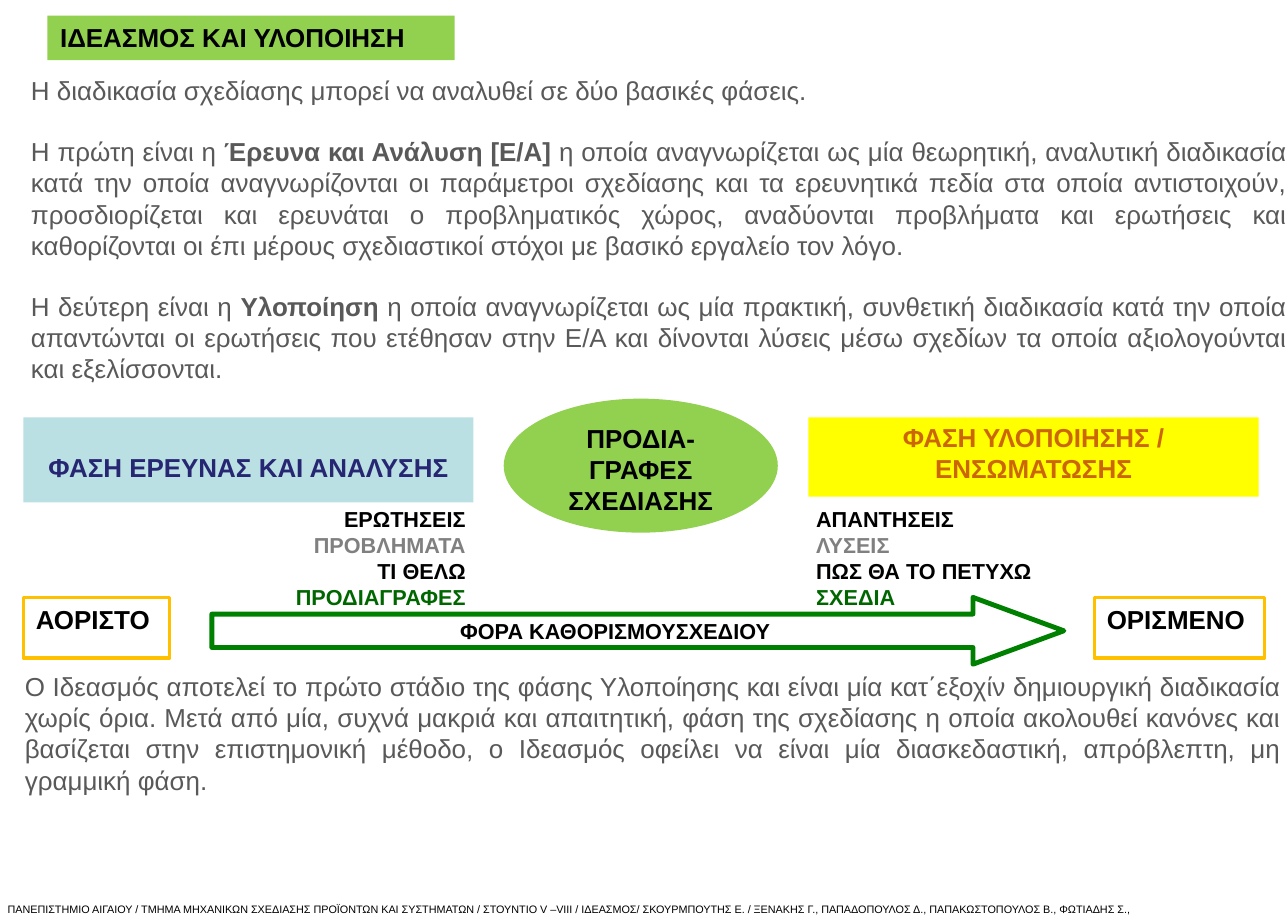
from pptx import Presentation, util as u
from pptx.dml.color import RGBColor
from pptx.enum import shapes, text

Cm, Pt = u.Cm, u.Pt
RECT = shapes.MSO_SHAPE.RECTANGLE
LEFT, CENTER, RIGHT, JUSTIFY = (text.PP_ALIGN.LEFT, text.PP_ALIGN.CENTER,
                                text.PP_ALIGN.RIGHT, text.PP_ALIGN.JUSTIFY)
THIN, WIDE = (0.25, 0.13), (0.41, 0.2)
LINE_24 = 27.6
GREEN, GREY = '92D050', '595959'


def rgb(value):
    return RGBColor.from_string(value)


def write(sp, paragraphs, size=24, color='000000', bold=True, align=LEFT,
          inset=THIN, top=None, wrap=True):
    tf = sp.text_frame
    tf.word_wrap = wrap
    tf.vertical_anchor = text.MSO_ANCHOR.TOP
    tf.margin_left = tf.margin_right = Cm(inset[0])
    tf.margin_top = Cm(inset[1] if top is None else top)
    tf.margin_bottom = Cm(inset[1])
    for i, content in enumerate(paragraphs):
        p = tf.add_paragraph() if i else tf.paragraphs[0]
        p.alignment = align
        p.font.name, p.font.size = 'Arial', Pt(size)
        p.font.bold = bold
        p.font.color.rgb = rgb(color)
        p.text = content
    return tf.paragraphs


def add_text(s, box, paragraphs, **style):
    return write(s.shapes.add_textbox(*map(Cm, box)), paragraphs, **style)


def add_block(s, box, content, kind=RECT, fill=None, line=None, width=3, **style):
    sp = s.shapes.add_shape(kind, *map(Cm, box))
    sp.shadow.inherit = False
    if fill:
        sp.fill.solid()
        sp.fill.fore_color.rgb = rgb(fill)
    else:
        sp.fill.background()
    if line:
        sp.line.color.rgb = rgb(line)
        sp.line.width = Pt(width)
    else:
        sp.line.fill.background()
    write(sp, [content], **style)
    return sp


def add_intro(s, x, y, w, h):
    add_block(s, (x + 0.79, y, 13.28, 1.45), 'ΙΔΕΑΣΜΟΣ ΚΑΙ ΥΛΟΠΟΙΗΣΗ',
              fill=GREEN, inset=WIDE)
    phases = [
        ('Η πρώτη είναι η ', 'Έρευνα και Ανάλυση [Ε/Α] ',
         'η οποία αναγνωρίζεται ως μία θεωρητική, αναλυτική διαδικασία κατά την '
         'οποία αναγνωρίζονται οι παράμετροι σχεδίασης και τα ερευνητικά πεδία στα '
         'οποία αντιστοιχούν, προσδιορίζεται και ερευνάται ο προβληματικός χώρος, '
         'αναδύονται προβλήματα και ερωτήσεις και καθορίζονται οι έπι μέρους '
         'σχεδιαστικοί στόχοι με βασικό εργαλείο τον λόγο.'),
        ('Η δεύτερη είναι η ', 'Υλοποίηση ',
         'η οποία αναγνωρίζεται ως μία πρακτική, συνθετική διαδικασία κατά την '
         'οποία απαντώνται οι ερωτήσεις που ετέθησαν στην Ε/Α και δίνονται λύσεις '
         'μέσω σχεδίων τα οποία αξιολογούνται και εξελίσσονται.'),
    ]
    lead = 'Η διαδικασία σχεδίασης μπορεί να αναλυθεί σε δύο βασικές φάσεις.'
    paragraphs = add_text(s, (x, y + 1.8, w, h - 1.8), [lead, '', ''],
                          color=GREY, bold=False, align=JUSTIFY)
    for p, parts in zip(paragraphs[1:], phases):
        p.space_before = Pt(LINE_24)
        for i, part in enumerate(parts):
            r = p.add_run()
            r.text = part
            r.font.bold = i == 1


def add_phase(s, x, y, w, h, name, fill, color, items, align, top=None):
    add_block(s, (x, y, w, h), name, fill=fill, color=color, align=CENTER, top=top)
    paragraphs = add_text(s, (x, y + 2.77, w, 3.68), items, size=20, align=align)
    for p, shade in zip(paragraphs, ('000000', '808080', '000000', '006600')):
        p.font.color.rgb = rgb(shade)


def add_diagram(s, x, y, w, h):
    column = 14.68
    add_phase(s, x, y + 0.61, column, 2.77, 'ΦΑΣΗ ΕΡΕΥΝΑΣ ΚΑΙ ΑΝΑΛΥΣΗΣ',
              'BBE0E3', '262673',
              ['ΕΡΩΤΗΣΕΙΣ', 'ΠΡΟΒΛΗΜΑΤΑ', 'ΤΙ ΘΕΛΩ', 'ΠΡΟΔΙΑΓΡΑΦΕΣ'], RIGHT, top=1.1)
    add_phase(s, x + 25.61, y + 0.61, column, 2.59, 'ΦΑΣΗ ΥΛΟΠΟΙΗΣΗΣ / ΕΝΣΩΜΑΤΩΣΗΣ',
              'FFFF00', 'CC6600',
              ['ΑΠΑΝΤΗΣΕΙΣ', 'ΛΥΣΕΙΣ', 'ΠΩΣ ΘΑ ΤΟ ΠΕΤΥΧΩ', 'ΣΧΕΔΙΑ'], LEFT)
    add_block(s, (x + 15.67, y, 8.94, 4.37), 'ΠΡΟΔΙΑ-ΓΡΑΦΕΣ ΣΧΕΔΙΑΣΗΣ',
              kind=shapes.MSO_SHAPE.OVAL, fill=GREEN, align=CENTER)
    row = y + 6.48
    for left, width, label in ((x, 4.78, 'ΑΟΡΙΣΤΟ'), (x + w - 5.56, 5.56, 'ΟΡΙΣΜΕΝΟ')):
        add_block(s, (left, row, width, 1.98), label,
                  fill='FFFFFF', line='FFC000', inset=WIDE)
    arrow = add_block(s, (x + 6.15, row, 27.79, h - 6.48), 'ΦΟΡΑ ΚΑΘΟΡΙΣΜΟΥΣΧΕΔΙΟΥ',
                      kind=shapes.MSO_SHAPE.RIGHT_ARROW, line='008000', width=4.5,
                      size=20, align=CENTER)
    arrow.adjustments[0], arrow.adjustments[1] = 0.5, 1.36


def add_closing(s, x, y, w, h):
    add_text(s, (x, y, w, h), [
        'Ο Ιδεασμός αποτελεί το πρώτο στάδιο της φάσης Υλοποίησης και είναι μία '
        'κατ΄εξοχίν δημιουργική διαδικασία χωρίς όρια. Μετά από μία, συχνά μακριά '
        'και απαιτητική, φάση της σχεδίασης η οποία ακολουθεί κανόνες και βασίζεται '
        'στην επιστημονική μέθοδο, ο Ιδεασμός οφείλει να είναι μία διασκεδαστική, '
        'απρόβλεπτη, μη γραμμική φάση.'], color=GREY, bold=False, align=JUSTIFY)


def add_footer(s, x, y, w, h):
    add_text(s, (x, y, w, h), [
        'ΠΑΝΕΠΙΣΤΗΜΙΟ ΑΙΓΑΙΟΥ / ΤΜΗΜΑ ΜΗΧΑΝΙΚΩΝ ΣΧΕΔΙΑΣΗΣ ΠΡΟΪΟΝΤΩΝ ΚΑΙ ΣΥΣΤΗΜΑΤΩΝ / '
        'ΣΤΟΥΝΤΙΟ V –VIII / ΙΔΕΑΣΜΟΣ/ ΣΚΟΥΡΜΠΟΥΤΗΣ Ε. / ΞΕΝΑΚΗΣ Γ., '
        'ΠΑΠΑΔΟΠΟΥΛΟΣ Δ., ΠΑΠΑΚΩΣΤΟΠΟΥΛΟΣ Β., ΦΩΤΙΑΔΗΣ Σ.,'],
        size=10, bold=False, wrap=False)


def main():
    prs = Presentation()
    prs.slide_width, prs.slide_height = Cm(42.01), Cm(30)
    s = prs.slides.add_slide(prs.slide_layouts[6])
    add_footer(s, 0, 29.31, 37.92, 0.69)
    add_diagram(s, 0.76, 13, 40.49, 8.66)
    add_intro(s, 0.76, 0.51, 41.45, 13.33)
    add_closing(s, 0.56, 21.74, 41.45, 5.38)
    prs.save("out.pptx")


if __name__ == "__main__":
    main()
